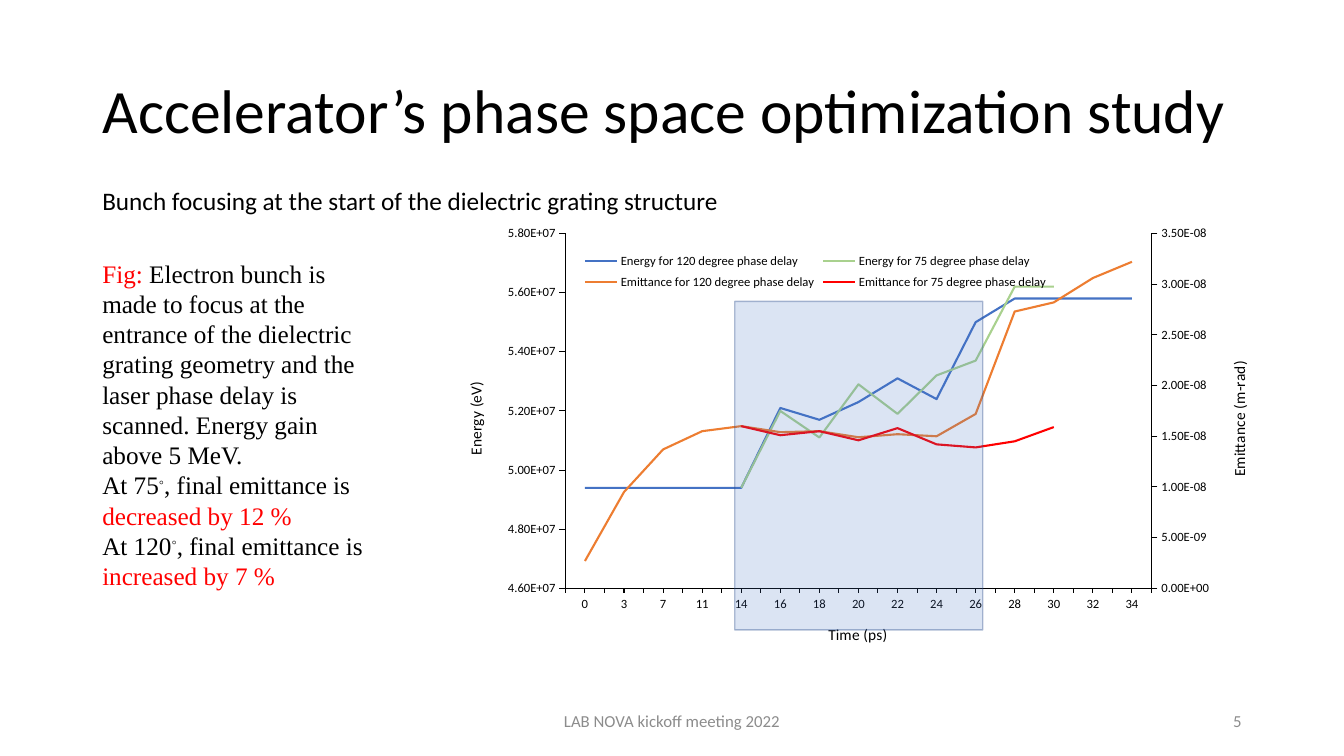
from copy import deepcopy
from lxml.etree import SubElement
from pptx import Presentation
from pptx.chart.data import CategoryChartData
from pptx.dml.color import RGBColor
from pptx.enum.chart import XL_CHART_TYPE, XL_LEGEND_POSITION, XL_TICK_MARK
from pptx.enum.shapes import MSO_SHAPE
from pptx.enum.text import MSO_ANCHOR, PP_ALIGN
from pptx.oxml.ns import qn
from pptx.util import Pt

# Content
BLACK, RED, GREY = "000000", "FF0000", "8C8C8C"
TITLE = "Accelerator’s phase space optimization study"
SUBTITLE = "Bunch focusing at the start of the dielectric grating structure"
FOOTER, PAGE = "LAB NOVA kickoff meeting 2022", "5"
CAPTION = [  # paragraphs of (text, colour, superscript)
    [("Fig:", RED, False),
     (" Electron bunch is made to focus at the entrance of the dielectric grating "
      "geometry and the laser phase delay is scanned. Energy gain above 5 MeV.", BLACK, False)],
    [("At 75", BLACK, False), ("◦", BLACK, True), (", final emittance is ", BLACK, False),
     ("decreased by 12 %", RED, False)],
    [("At 120", BLACK, False), ("◦", BLACK, True), (", final emittance is ", BLACK, False),
     ("increased by 7 %", RED, False)],
]
TIMES = [0, 3, 7, 11, 14, 16, 18, 20, 22, 24, 26, 28, 30, 32, 34]
FIRST_SCANNED = TIMES.index(14)
ENERGY, EMITTANCE = 1e7, 1e-8  # units of the values below
SERIES = [  # name, colour, unit, index of first value, values
    ("Energy for 120 degree phase delay", "4472C4", ENERGY, 0,
     [4.94, 4.94, 4.94, 4.94, 4.94, 5.21, 5.17, 5.23, 5.31, 5.24, 5.5,
      5.58, 5.58, 5.58, 5.58]),
    ("Energy for 75 degree phase delay", "A9D18E", ENERGY, FIRST_SCANNED,
     [4.94, 5.2, 5.11, 5.29, 5.19, 5.32, 5.37, 5.62, 5.62]),
    ("Emittance for 120 degree phase delay", "ED7D31", EMITTANCE, 0,
     [0.27, 0.95, 1.37, 1.55, 1.6, 1.54, 1.55, 1.49, 1.52, 1.5, 1.72, 2.73, 2.82, 3.06, 3.22]),
    ("Emittance for 75 degree phase delay", RED, EMITTANCE, FIRST_SCANNED,
     [1.6, 1.51, 1.55, 1.46, 1.58, 1.42, 1.39, 1.45, 1.59]),
]


def rgb(color):
    return RGBColor.from_string(color)


def style(font, size, color=BLACK, name="Calibri"):
    font.size, font.name, font.bold = Pt(size), name, False
    font.color.rgb = rgb(color)


def box(left, top, width, height):
    return Pt(left), Pt(top), Pt(width), Pt(height)


def add_text(place, text, size, color=BLACK, align=PP_ALIGN.LEFT, anchor=MSO_ANCHOR.TOP):
    frame = slide.shapes.add_textbox(*place).text_frame
    frame.word_wrap, frame.vertical_anchor = True, anchor
    frame.text = text
    frame.paragraphs[0].alignment = align
    style(frame.paragraphs[0].runs[0].font, size, color)


def set_layout(element, index, inner=False, **fractions):
    """Place a chart part by fractions of the chart's size."""
    layout = element.find(qn("c:layout"))
    if layout is None:
        layout = element.makeelement(qn("c:layout"))
        element.insert(index, layout)
    for child in list(layout):
        layout.remove(child)
    manual = SubElement(layout, qn("c:manualLayout"))
    if inner:
        SubElement(manual, qn("c:layoutTarget")).set("val", "inner")
    for mode in ("xMode", "yMode"):
        SubElement(manual, qn("c:" + mode)).set("val", "edge")
    for key, value in fractions.items():
        SubElement(manual, qn("c:" + key)).set("val", str(value))


def format_axis(axis, title, x, y, turned):
    axis.has_major_gridlines = False
    axis.major_tick_mark = XL_TICK_MARK.OUTSIDE
    axis.format.line.color.rgb = rgb(BLACK)
    axis.format.line.width = Pt(0.75)
    style(axis.tick_labels.font, 9)
    frame = axis.axis_title.text_frame
    frame.text = title
    style(frame.paragraphs[0].runs[0].font, 11)
    if turned:
        body = frame._txBody.find(qn("a:bodyPr"))
        body.set("rot", "-5400000")
        body.set("vert", "horz")
    set_layout(axis.axis_title._element, 1, x=x, y=y)


prs = Presentation()
prs.slide_width, prs.slide_height = Pt(960), Pt(540)
slide = prs.slides.add_slide(prs.slide_layouts[5])

# Title
title = slide.shapes.title
title.left, title.top, title.width, title.height = box(66, 28.75, 828, 104.4)
title.text_frame.text = TITLE
title.text_frame.vertical_anchor = MSO_ANCHOR.MIDDLE
heading = title.text_frame.paragraphs[0]
heading.alignment, heading.line_spacing = PP_ALIGN.LEFT, 0.9
style(heading.runs[0].font, 44)

# Footer and page number
add_text(box(318, 500.5, 324, 28.75), FOOTER, 12, GREY, PP_ALIGN.CENTER, MSO_ANCHOR.MIDDLE)
add_text(box(678, 500.5, 216, 28.75), PAGE, 12, GREY, PP_ALIGN.RIGHT, MSO_ANCHOR.MIDDLE)

# Chart
data = CategoryChartData(number_format="0.00E+00")
data.categories = [str(time) for time in TIMES]
for name, _, unit, first, values in SERIES:
    gap_after = len(TIMES) - first - len(values)
    scaled = [float(f"{value * unit:.3g}") for value in values]
    data.add_series(name, [None] * first + scaled + [None] * gap_after)
chart = slide.shapes.add_chart(XL_CHART_TYPE.LINE, *box(318.4, 133.5, 589.7, 342.7), data).chart
style(chart.font, 10)
chart.has_title = False
chart.plots[0].vary_by_categories = False
for series, (_, color, *_) in zip(chart.plots[0].series, SERIES):
    series.smooth = False
    series.format.line.color.rgb = rgb(color)
    series.format.line.width = Pt(1.5)

chart.has_legend = True
chart.legend.position = XL_LEGEND_POSITION.TOP
chart.legend.include_in_layout = False
style(chart.legend.font, 9)
set_layout(chart.legend._element, 1, x=0.163, y=0.127, w=0.57, h=0.1)

format_axis(chart.category_axis, "Time (ps)", 0.46, 0.905, False)
chart.category_axis.major_tick_mark = XL_TICK_MARK.NONE
chart.category_axis.minor_tick_mark = XL_TICK_MARK.OUTSIDE
energy_axis = chart.value_axis
format_axis(energy_axis, "Energy (eV)", 0.02, 0.4, True)
energy_axis.minimum_scale, energy_axis.maximum_scale = 4.6e7, 5.8e7
energy_axis.major_unit = 2e6
energy_axis.tick_labels.number_format = "0.00E+00"
energy_axis.tick_labels.number_format_is_linked = False

# Right axis: the emittance series move to a second line plot
plot_area = chart._chartSpace.find(".//" + qn("c:plotArea"))
set_layout(plot_area, 0, inner=True, x=0.145, y=0.097, w=0.71, h=0.74)
energy_plot, time_ax, energy_ax = (
    plot_area.find(qn("c:" + tag)) for tag in ("lineChart", "catAx", "valAx"))
emittance_plot, hidden_time_ax, emittance_ax = map(deepcopy, (energy_plot, time_ax, energy_ax))
for plot, unit in ((energy_plot, ENERGY), (emittance_plot, EMITTANCE)):
    for ser, (_, _, series_unit, *_) in zip(plot.findall(qn("c:ser")), SERIES):
        if series_unit != unit:
            plot.remove(ser)
energy_plot.addnext(emittance_plot)
energy_ax.addnext(hidden_time_ax)
hidden_time_ax.addnext(emittance_ax)

TIME_ID, EMITTANCE_ID = "50010", "50020"
for axis_id, value in zip(emittance_plot.findall(qn("c:axId")), (TIME_ID, EMITTANCE_ID)):
    axis_id.set("val", value)
for axis, own, other in ((hidden_time_ax, TIME_ID, EMITTANCE_ID),
                         (emittance_ax, EMITTANCE_ID, TIME_ID)):
    axis.find(qn("c:axId")).set("val", own)
    axis.find(qn("c:crossAx")).set("val", other)
hidden_time_ax.find(qn("c:delete")).set("val", "1")
hidden_time_ax.remove(hidden_time_ax.find(qn("c:title")))
for tag, value in (("axPos", "r"), ("crosses", "max"), ("majorUnit", "5e-9"),
                   ("scaling/c:min", "0"), ("scaling/c:max", "3.5e-8")):
    emittance_ax.find("/".join(qn(part if ":" in part else "c:" + part)
                               for part in tag.split("/"))).set("val", value)
emittance_title = emittance_ax.find(qn("c:title"))
emittance_title.find(".//" + qn("a:t")).text = "Emittance (m-rad)"
set_layout(emittance_title, 1, x=0.945, y=0.357)

# Figure caption
caption = slide.shapes.add_textbox(*box(66, 180.7, 206.6, 247)).text_frame
caption.word_wrap = True
for number, parts in enumerate(CAPTION):
    paragraph = caption.add_paragraph() if number else caption.paragraphs[0]
    for text, color, raised in parts:
        run = paragraph.add_run()
        run.text = text
        style(run.font, 18, color, "Times New Roman")
        if raised:
            run.font._element.set("baseline", "30000")

# Scanned time window
window = slide.shapes.add_shape(MSO_SHAPE.RECTANGLE, *box(524.9, 215.3, 177.1, 234.7))
window.shadow.inherit = False
window.fill.solid()
window.fill.fore_color.rgb = rgb("4472C4")
window.line.color.rgb = rgb("2F528F")
window.line.width = Pt(1)
fill_color, line_color = window._element.spPr.findall(".//" + qn("a:srgbClr"))
for color, opacity in ((fill_color, 19), (line_color, 39)):
    SubElement(color, qn("a:alpha")).set("val", str(opacity * 1000))

# Subtitle
add_text(box(66, 128.9, 480, 29), SUBTITLE, 18)

prs.save("out.pptx")
